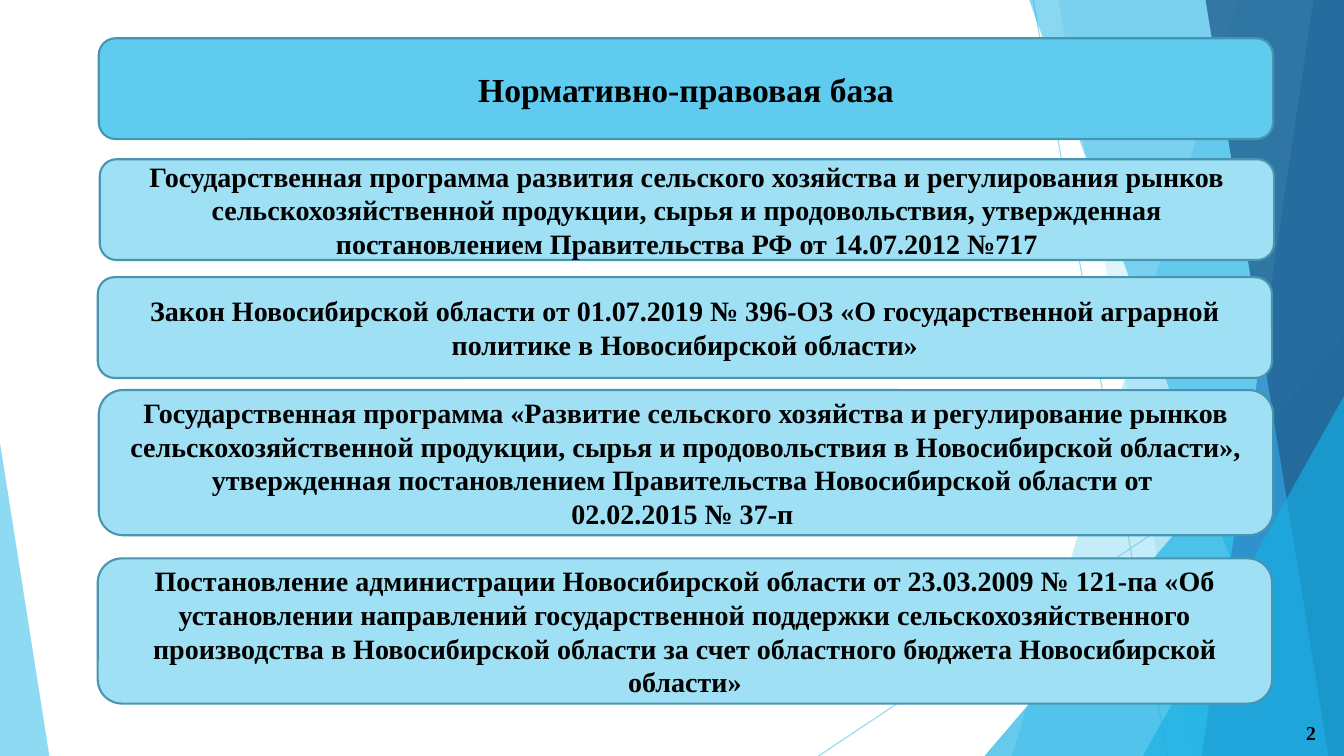
from dataclasses import dataclass

from lxml.etree import SubElement
from pptx import Presentation
from pptx.dml.color import RGBColor
from pptx.dml.fill import FillFormat
from pptx.enum.shapes import MSO_CONNECTOR, MSO_SHAPE
from pptx.enum.text import MSO_ANCHOR, MSO_AUTO_SIZE, PP_ALIGN
from pptx.oxml.ns import qn
from pptx.slide import Slide
from pptx.text.text import _Paragraph as Paragraph
from pptx.util import Inches, Pt

SLIDE_WIDTH = Inches(13.33)
SLIDE_HEIGHT = Inches(7.5)
GRID_COLUMNS = 40
GRID_ROWS = 30

SKY = RGBColor(0x5F, 0xCB, 0xEF)
PALE_SKY = RGBColor(0x9F, 0xE0, 0xF5)
AZURE = RGBColor(0x17, 0xB0, 0xE4)
BLUE = RGBColor(0x2E, 0x83, 0xC3)
NAVY = RGBColor(0x22, 0x62, 0x92)
OUTLINE = RGBColor(0x46, 0x96, 0xB1)
BLACK = RGBColor(0x00, 0x00, 0x00)

FONT_NAME = "Times New Roman"
CARD_COLUMNS = 34.95


@dataclass(frozen=True)
class Ray:
    start: tuple[float, float]
    end: tuple[float, float]


@dataclass(frozen=True)
class Band:
    top_column: float
    bottom_column: float
    color: RGBColor
    opacity: int


@dataclass(frozen=True)
class Wedge:
    column: float
    row: float
    columns: float
    rows: float
    apex: float
    color: RGBColor
    opacity: int


@dataclass(frozen=True)
class Card:
    column: float
    row: float
    rows: float
    paragraphs: tuple[str, ...]
    color: RGBColor = PALE_SKY
    font_size: int = 20


RAYS = (
    Ray((30.75, 0), (34.74, GRID_ROWS)),
    Ray((GRID_COLUMNS, 16.12), (24.36, GRID_ROWS)),
)

FACETS = (
    Band(36.84, 30.12, SKY, 36),
    Band(31.5, 35.49, SKY, 20),
    Wedge(29.3, 13.32, 10.7, 16.68, 1, AZURE, 66),
    Band(30.63, 38.73, AZURE, 50),
    Band(39.09, 35.76, BLUE, 70),
    Band(35.88, 39.54, NAVY, 80),
    Wedge(34.02, 15.72, 5.98, 14.28, 1, AZURE, 66),
    Wedge(0, 17.56, 1.47, 12.44, 0, SKY, 70),
)

CARDS = (
    Card(2.94, 1.52, 4, ("Нормативно-правовая база",), SKY, 24),
    Card(2.97, 6.32, 4, (
        "Государственная программа развития сельского хозяйства и регулирования "
        "рынков сельскохозяйственной продукции, сырья и продовольствия, "
        "утвержденная постановлением Правительства РФ от 14.07.2012 №717",
    )),
    Card(2.91, 11, 4, (
        "Закон Новосибирской области от 01.07.2019 № 396-ОЗ "
        "«О государственной аграрной политике в Новосибирской области»",
    )),
    Card(2.94, 15.48, 5.76, (
        "Государственная программа «Развитие сельского хозяйства и регулирование "
        "рынков сельскохозяйственной продукции, сырья и продовольствия "
        "в Новосибирской области», утвержденная постановлением Правительства "
        "Новосибирской области от ",
        "02.02.2015 № 37-п ",
    )),
    Card(2.91, 22.16, 5.76, (
        "Постановление администрации Новосибирской области от 23.03.2009 № 121-па "
        "«Об установлении направлений государственной поддержки "
        "сельскохозяйственного производства в Новосибирской области за счет "
        "областного бюджета Новосибирской области»",
    )),
)


def across(columns: float) -> int:
    return round(SLIDE_WIDTH * columns / GRID_COLUMNS)


def down(rows: float) -> int:
    return round(SLIDE_HEIGHT * rows / GRID_ROWS)


def set_fill(fill: FillFormat, color: RGBColor, holder, opacity: int = 100) -> None:
    fill.solid()
    fill.fore_color.rgb = color
    if opacity < 100:
        color_element = holder.find(qn("a:solidFill")).find(qn("a:srgbClr"))
        SubElement(color_element, qn("a:alpha"), val=str(opacity * 1000))


def set_font(paragraph: Paragraph, size: int) -> None:
    paragraph.font.name = FONT_NAME
    paragraph.font.size = Pt(size)
    paragraph.font.bold = True
    paragraph.font.color.rgb = BLACK


def draw_ray(slide: Slide, ray: Ray) -> None:
    connector = slide.shapes.add_connector(
        MSO_CONNECTOR.STRAIGHT,
        across(ray.start[0]), down(ray.start[1]),
        across(ray.end[0]), down(ray.end[1]),
    )
    connector.line.width = Pt(0.75)
    properties = connector._element.spPr
    set_fill(connector.line.fill, SKY, properties.find(qn("a:ln")), 70)
    SubElement(properties, qn("a:effectLst"))


def draw_facet(slide: Slide, facet: Band | Wedge) -> None:
    if isinstance(facet, Band):
        builder = slide.shapes.build_freeform(across(facet.top_column), 0)
        builder.add_line_segments([
            (SLIDE_WIDTH, 0),
            (SLIDE_WIDTH, SLIDE_HEIGHT),
            (across(facet.bottom_column), SLIDE_HEIGHT),
        ])
        shape = builder.convert_to_shape()
    else:
        shape = slide.shapes.add_shape(
            MSO_SHAPE.ISOSCELES_TRIANGLE,
            across(facet.column), down(facet.row),
            across(facet.columns), down(facet.rows),
        )
        shape.adjustments[0] = facet.apex
    set_fill(shape.fill, facet.color, shape._element.spPr, facet.opacity)
    shape.line.fill.background()
    shape.shadow.inherit = False


def draw_card(slide: Slide, card: Card) -> None:
    shape = slide.shapes.add_shape(
        MSO_SHAPE.ROUNDED_RECTANGLE,
        across(card.column), down(card.row), across(CARD_COLUMNS), down(card.rows),
    )
    set_fill(shape.fill, card.color, shape._element.spPr)
    shape.line.color.rgb = OUTLINE
    shape.line.width = Pt(1.5)
    shape.shadow.inherit = False
    frame = shape.text_frame
    frame.word_wrap = True
    frame.vertical_anchor = MSO_ANCHOR.MIDDLE
    frame.text = "\n".join(card.paragraphs)
    for paragraph in frame.paragraphs:
        paragraph.alignment = PP_ALIGN.CENTER
        set_font(paragraph, card.font_size)


def draw_page_number(slide: Slide, number: int) -> None:
    box = slide.shapes.add_textbox(across(38.58), down(28.4), across(0.9), down(1.36))
    frame = box.text_frame
    frame.word_wrap = False
    frame.auto_size = MSO_AUTO_SIZE.SHAPE_TO_FIT_TEXT
    frame.text = str(number)
    set_font(frame.paragraphs[0], 14)


def main() -> None:
    presentation = Presentation()
    presentation.slide_width = SLIDE_WIDTH
    presentation.slide_height = SLIDE_HEIGHT
    slide = presentation.slides.add_slide(presentation.slide_layouts[6])
    for ray in RAYS:
        draw_ray(slide, ray)
    for facet in FACETS:
        draw_facet(slide, facet)
    for card in CARDS:
        draw_card(slide, card)
    draw_page_number(slide, 2)
    presentation.save("out.pptx")


if __name__ == "__main__":
    main()
